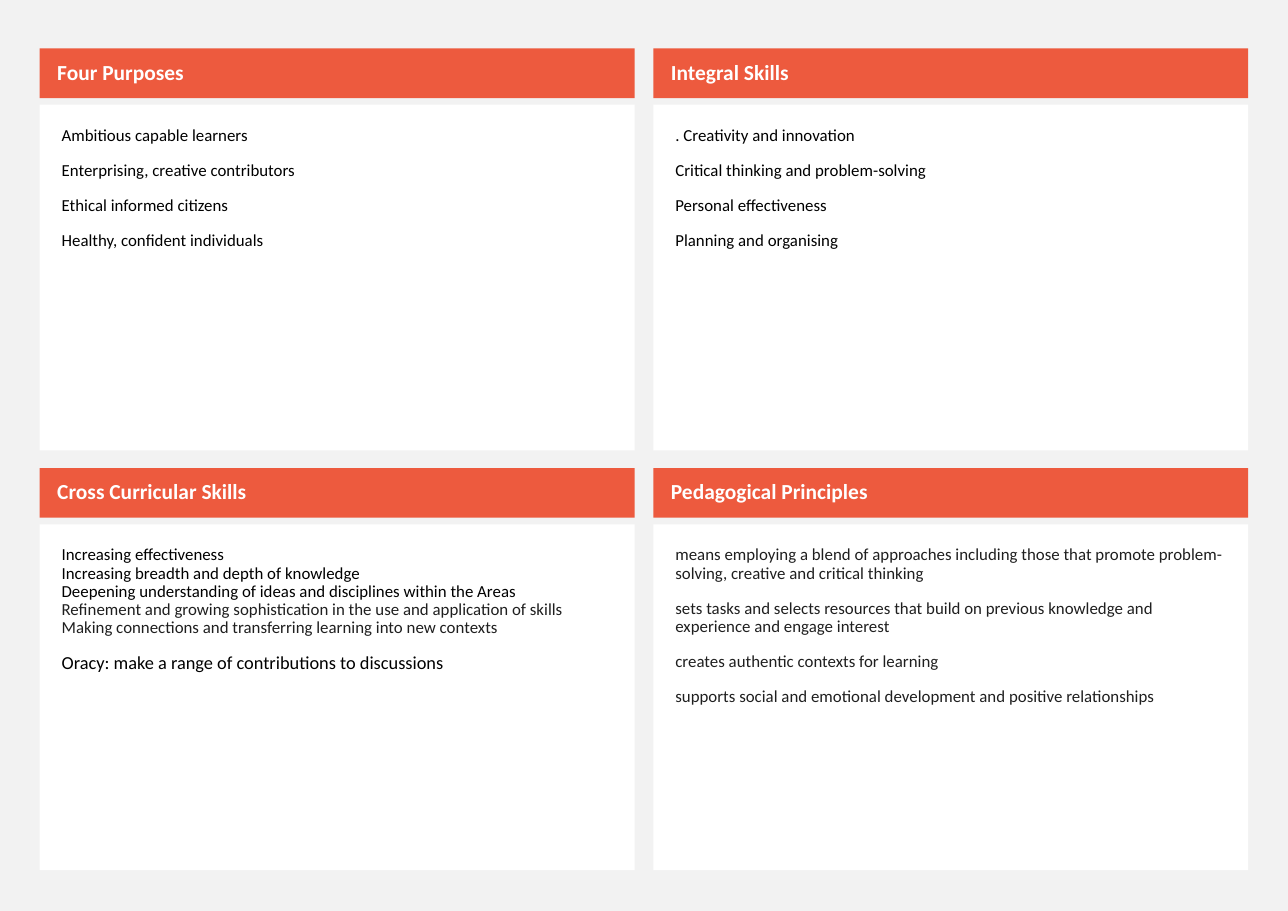
from dataclasses import dataclass

from pptx import Presentation
from pptx.dml.color import RGBColor
from pptx.enum.shapes import MSO_SHAPE as Preset
from pptx.enum.text import MSO_ANCHOR as Anchor, PP_ALIGN as Align
from pptx.shapes.autoshape import Shape
from pptx.slide import Slide
from pptx.text.text import TextFrame
from pptx.util import Inches, Pt

COLOURS = {
    "page": "F2F2F2",
    "header": "ED5A3E",
    "panel": "FFFFFF",
    "title": "FFFFFF",
    "black": "000000",
    "charcoal": "1F1F1F",
}
FONT = "Calibri"
PAGE_WIDTH, PAGE_HEIGHT = 11.69, 8.27
GRID_LEFT, GRID_TOP = 0.36, 0.44
COLUMN_STEP, ROW_STEP = 5.57, 3.81
CARD_WIDTH = 5.4
HEADER_HEIGHT, PANEL_HEIGHT = 0.45, 3.14
PANEL_OFFSET = 0.51
HEADER_INSETS = (0.16, 0.05, 0.1, 0.05)
PANEL_INSETS = (0.2, 0.2, 0.2, 0.2)


@dataclass(frozen=True)
class Line:
    text: str
    colour: str = "black"
    size: int = 11
    bold: bool = False


@dataclass(frozen=True)
class Card:
    column: int
    row: int
    title: str
    paragraphs: tuple[tuple[Line, ...], ...]


def separate(*texts: str, colour: str = "black") -> tuple[tuple[Line, ...], ...]:
    return tuple((Line(text, colour),) for text in texts)


CARDS = (
    Card(0, 0, "Four Purposes", separate(
        "Ambitious capable learners",
        "Enterprising, creative contributors",
        "Ethical informed citizens",
        "Healthy, confident individuals",
    )),
    Card(1, 0, "Integral Skills", separate(
        ". Creativity and innovation",
        "Critical thinking and problem-solving",
        "Personal effectiveness",
        "Planning and organising",
    )),
    Card(0, 1, "Cross Curricular Skills", (
        (
            Line("Increasing effectiveness"),
            Line("Increasing breadth and depth of knowledge"),
            Line("Deepening understanding of ideas and disciplines within the Areas"),
            Line("Refinement and growing sophistication in the use and application of skills", "charcoal"),
            Line("Making connections and transferring learning into new contexts", "charcoal"),
        ),
        (Line("Oracy: make a range of contributions to discussions", size=12),),
    )),
    Card(1, 1, "Pedagogical Principles", separate(
        "means employing a blend of approaches including those that promote "
        "problem-solving, creative and critical thinking",
        "sets tasks and selects resources that build on previous knowledge and "
        "experience and engage interest",
        "creates authentic contexts for learning",
        "supports social and emotional development and positive relationships",
        colour="charcoal",
    )),
)


def colour_of(name: str) -> RGBColor:
    return RGBColor.from_string(COLOURS[name])


def add_box(page: Slide, left: float, top: float, height: float, fill: str) -> Shape:
    box = page.shapes.add_shape(
        Preset.RECTANGLE, Inches(left), Inches(top), Inches(CARD_WIDTH), Inches(height)
    )
    box.shadow.inherit = False
    box.fill.solid()
    box.fill.fore_color.rgb = colour_of(fill)
    box.line.fill.background()
    return box


def write(frame: TextFrame, paragraphs: tuple[tuple[Line, ...], ...],
          insets: tuple[float, float, float, float], anchor: Anchor) -> None:
    frame.word_wrap = True
    frame.vertical_anchor = anchor
    (frame.margin_left, frame.margin_top,
     frame.margin_right, frame.margin_bottom) = map(Inches, insets)
    for number, lines in enumerate(paragraphs):
        para = frame.add_paragraph() if number else frame.paragraphs[0]
        para.alignment = Align.LEFT
        para.line_spacing = 0.9
        para.space_before = Pt(11)
        for position, line in enumerate(lines):
            if position:
                para.add_line_break()
            span = para.add_run()
            span.text = line.text
            span.font.name = FONT
            span.font.size = Pt(line.size)
            span.font.bold = line.bold
            span.font.color.rgb = colour_of(line.colour)


def draw_card(page: Slide, card: Card) -> None:
    left = GRID_LEFT + card.column * COLUMN_STEP
    top = GRID_TOP + card.row * ROW_STEP
    panel = add_box(page, left, top + PANEL_OFFSET, PANEL_HEIGHT, "panel")
    write(panel.text_frame, card.paragraphs, PANEL_INSETS, Anchor.TOP)
    header = add_box(page, left, top, HEADER_HEIGHT, "header")
    title = Line(card.title, "title", 14, True)
    write(header.text_frame, ((title,),), HEADER_INSETS, Anchor.MIDDLE)


def main() -> None:
    deck = Presentation()
    deck.slide_width = Inches(PAGE_WIDTH)
    deck.slide_height = Inches(PAGE_HEIGHT)
    page = deck.slides.add_slide(deck.slide_layouts[6])
    page.background.fill.solid()
    page.background.fill.fore_color.rgb = colour_of("page")
    for card in CARDS:
        draw_card(page, card)
    deck.save("out.pptx")


if __name__ == "__main__":
    main()
